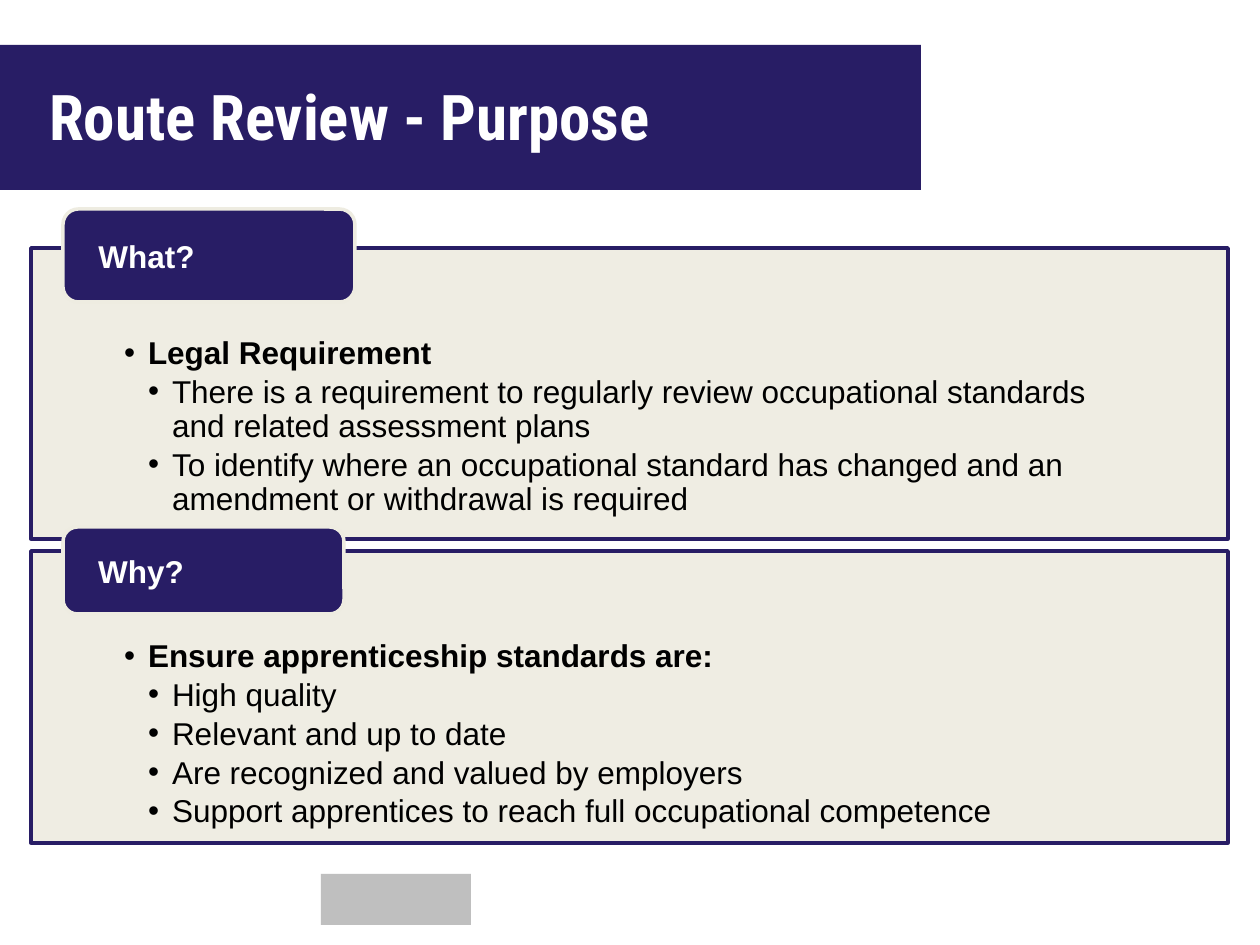
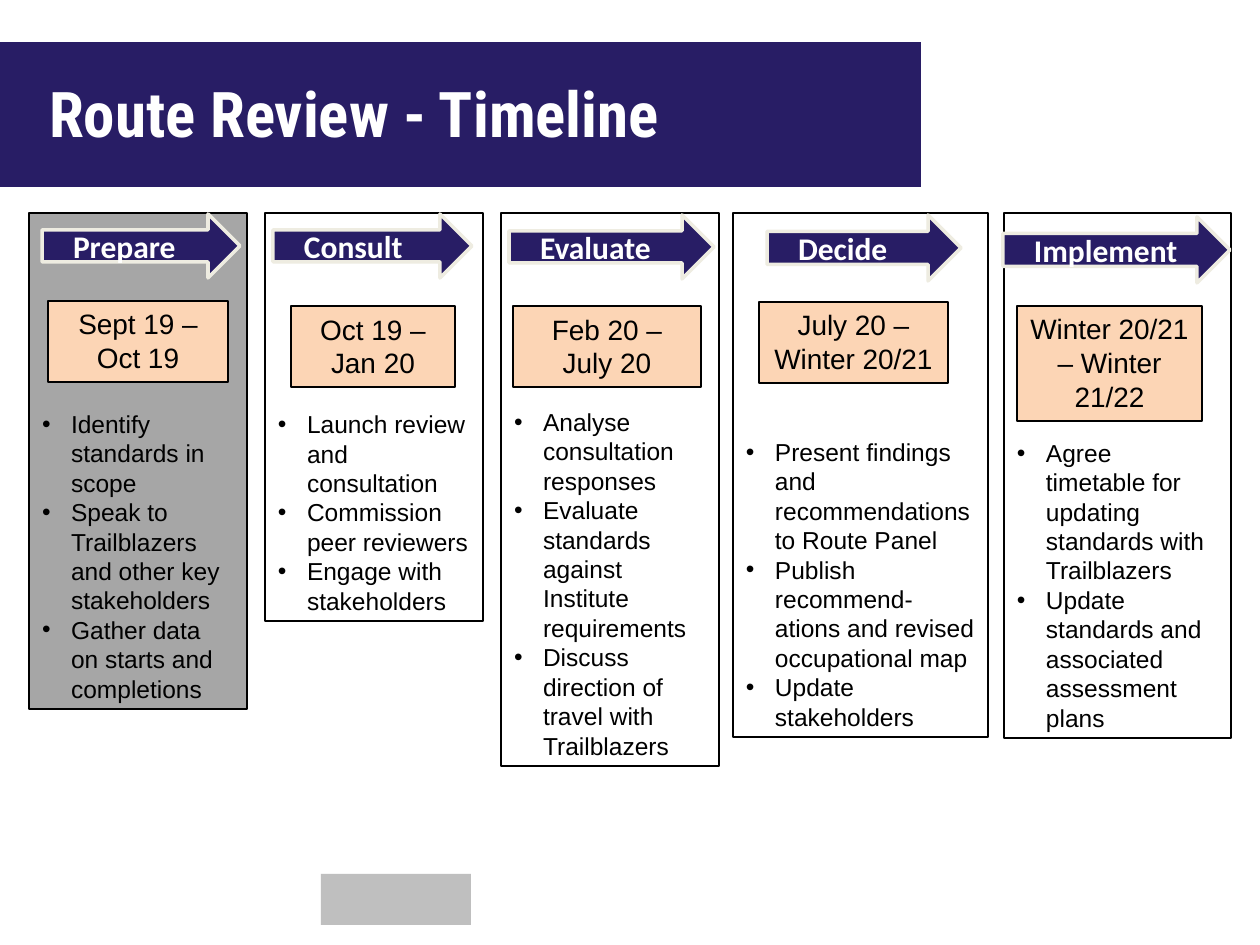
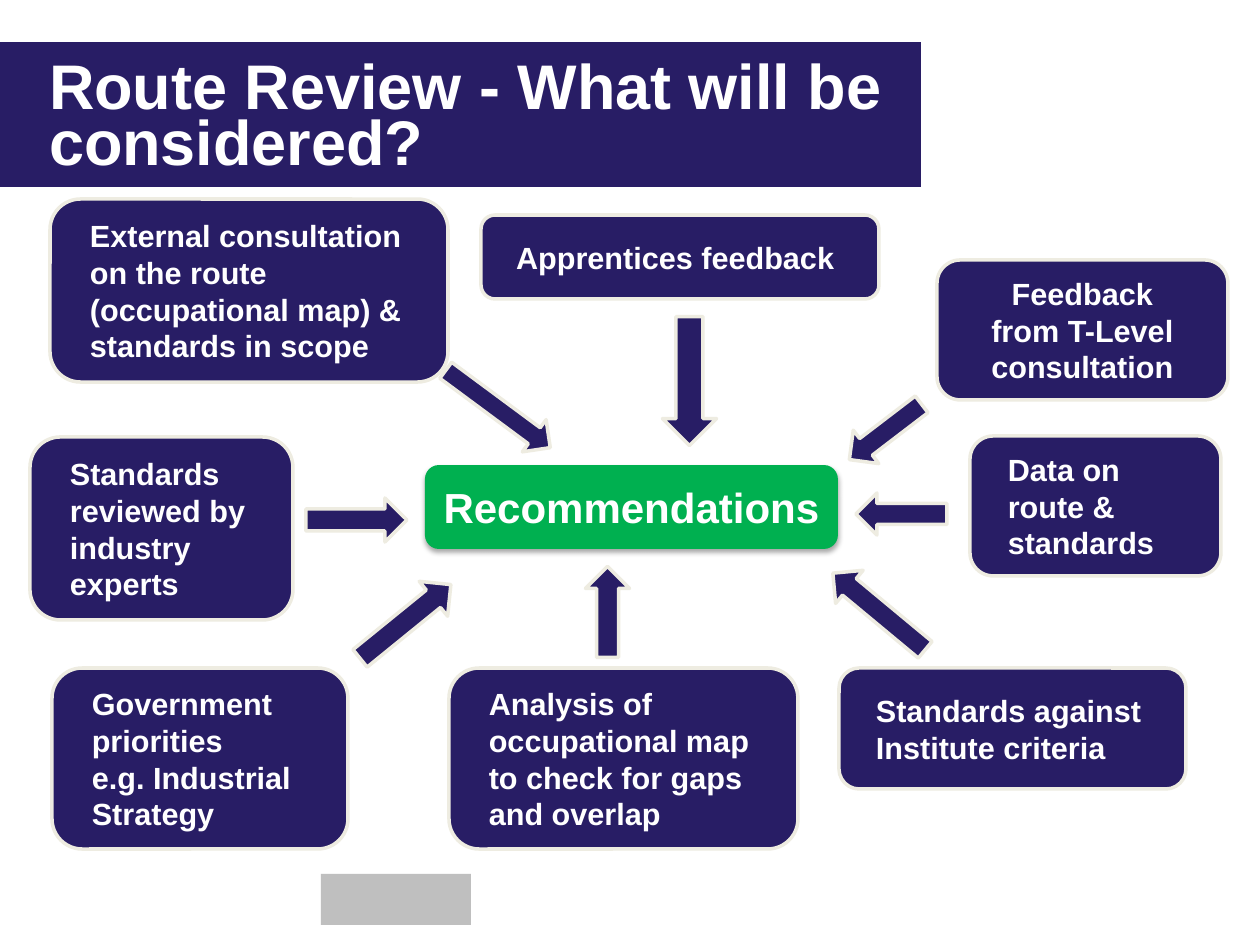
from lxml.etree import SubElement
from pptx import Presentation
from pptx.dml.color import RGBColor
from pptx.enum.shapes import MSO_SHAPE as Preset
from pptx.enum.text import MSO_ANCHOR as Anchor, MSO_AUTO_SIZE as AutoSize, PP_ALIGN as Align
from pptx.oxml.ns import qn
from pptx.util import Emu, Inches, Pt

NAVY = RGBColor(0x28, 0x1D, 0x65)
CREAM = RGBColor(0xEE, 0xEC, 0xE1)
WHITE = RGBColor(0xFF, 0xFF, 0xFF)
BLACK = RGBColor(0x00, 0x00, 0x00)
SILVER = RGBColor(0xBF, 0xBF, 0xBF)
GREY = RGBColor(0xA6, 0xA6, 0xA6)
PEACH = RGBColor(0xFC, 0xD5, 0xB5)
GREEN = RGBColor(0x00, 0xB0, 0x50)

SCALE = Inches(1) / 126
TWO_CONTENT, TITLE_ONLY = 3, 5
PLAIN_INSETS = (13, 6, 13, 6)
LABEL_INSETS = (31, 0, 31, 0)
PANEL_INSETS = (93, 89, 93, 18)

TITLE_FONT = {"name": "Roboto Condensed", "size": Pt(36), "bold": True}
TAB_FONT = {"name": "Arial", "size": Pt(18), "bold": True}
LIST_FONT = {"name": "Arial", "size": Pt(18), "bold": False}
STEP_FONT = {"name": "Calibri", "size": Pt(18), "bold": True}
DATE_FONT = {"name": "Arial", "size": Pt(16), "bold": False}
TASK_FONT = {"name": "Arial", "size": Pt(14), "bold": False}
SOURCE_FONT = {"name": "Arial", "size": Pt(17.5), "bold": True}
RESULT_FONT = {"name": "Arial", "size": Pt(24), "bold": True}

TITLE_PARA = {"alignment": Align.LEFT, "line_spacing": Pt(32), "space_before": Pt(0)}
LIST_PARA = {"line_spacing": 0.9, "space_before": Pt(0), "space_after": Pt(2.8)}
LEFT_PARA = {"alignment": Align.LEFT}
CENTRE_PARA = {"alignment": Align.CENTER}

PANELS = [
    ((31, 248, 1197, 291), (63, 209, 292, 93), "What?", "Legal Requirement", [
        "There is a requirement to regularly review occupational standards "
        "and related assessment plans",
        "To identify where an occupational standard has changed and an "
        "amendment or withdrawal is required"]),
    ((31, 551, 1197, 292), (63, 527, 281, 87), "Why?", "Ensure apprenticeship standards are:", [
        "High quality",
        "Relevant and up to date",
        "Are recognized and valued by employers",
        "Support apprentices to reach full occupational competence"]),
]

COLUMN_TOP = 213
STEPS = [
    ((29, 218, 496), GREY, "Prepare", (13, 1, 198, 64), ["Sept 19 – Oct 19"], (19, 88, 180, 81),
     ["Identify standards in scope", "Speak to Trailblazers and other key stakeholders",
      "Gather data on starts and completions"]),
    ((265, 218, 408), None, "Consult", (8, 1, 199, 64), ["Oct 19 –", "Jan 20"], (26, 93, 164, 81),
     ["Launch review and consultation", "Commission peer reviewers",
      "Engage with stakeholders"]),
    ((501, 218, 553), None, "Evaluate", (8, 2, 205, 64), ["Feb 20 – July 20"], (12, 93, 188, 81),
     ["Analyse consultation responses", "Evaluate standards against Institute requirements",
      "Discuss direction of travel with Trailblazers"]),
    ((733, 255, 524), None, "Decide", (34, 2, 194, 66), ["July 20 – Winter 20/21"], (26, 89, 189, 81),
     ["Present findings and recommendations to Route Panel",
      "Publish recommend-ations and revised occupational map", "Update stakeholders"]),
    ((1004, 227, 525), None, "Implement", (-1, 4, 227, 66), ["Winter 20/21 – Winter 21/22"],
     (13, 93, 185, 115),
     ["Agree timetable for updating standards with Trailblazers",
      "Update standards and associated assessment plans"]),
]

SOURCES = [
    ((50, 199, 398, 183), LEFT_PARA,
     ["External consultation on the route (occupational map) & standards in scope"]),
    ((481, 215, 398, 84), LEFT_PARA, ["Apprentices feedback"]),
    ((937, 260, 291, 140), CENTRE_PARA, ["Feedback from T-Level consultation"]),
    ((30, 437, 263, 183), LEFT_PARA, ["Standards reviewed by industry experts"]),
    ((970, 436, 251, 140), LEFT_PARA, ["Data on route & standards"]),
    ((52, 668, 296, 181), LEFT_PARA, ["Government priorities", "e.g. Industrial Strategy"]),
    ((449, 668, 349, 181), LEFT_PARA,
     ["Analysis of occupational map to check for gaps and overlap"]),
    ((839, 668, 347, 121), LEFT_PARA, ["Standards against Institute criteria"]),
]

POINTERS = [
    (Preset.RIGHT_ARROW, (433, 389, 130, 40), 36.5),
    (Preset.RIGHT_ARROW, (306, 498, 101, 44), 0),
    (Preset.RIGHT_ARROW, (347, 599, 117, 45), 320.9),
    (Preset.LEFT_ARROW, (840, 411, 91, 42), 322.6),
    (Preset.LEFT_ARROW, (625, 354, 129, 54), 270),
    (Preset.LEFT_ARROW, (819, 590, 120, 43), 39.7),
    (Preset.LEFT_ARROW, (562, 590, 91, 44), 90),
    (Preset.LEFT_ARROW, (856, 493, 91, 42), 0),
]


def px(length):
    return Emu(round(length * SCALE))


def apply(target, values):
    for name, value in values.items():
        setattr(target, name, value)


def place(shape, box):
    apply(shape, dict(zip(("left", "top", "width", "height"), map(px, box))))


def paint(shape, fill, line=None, width=2):
    if fill is None:
        shape.fill.background()
    else:
        shape.fill.solid()
        shape.fill.fore_color.rgb = fill
    if line is None:
        shape.line.fill.background()
    else:
        shape.line.color.rgb = line
        shape.line.width = Pt(width)


def add_block(page, preset, box, fill, line=None, width=2):
    block = page.shapes.add_shape(preset, *map(px, box))
    block.shadow.inherit = False
    paint(block, fill, line, width)
    return block


def set_frame(shape, insets, anchor):
    frame = shape.text_frame
    sides = ("margin_left", "margin_top", "margin_right", "margin_bottom")
    apply(frame, dict(zip(sides, map(px, insets))))
    apply(frame, {"word_wrap": True, "auto_size": AutoSize.NONE, "vertical_anchor": anchor})
    return frame


def add_bullet(para, margin, hanging):
    properties = para._p.get_or_add_pPr()
    properties.set("marL", str(px(margin)))
    properties.set("indent", str(-px(hanging)))
    SubElement(properties, qn("a:buFont")).set("typeface", "Arial")
    SubElement(properties, qn("a:buChar")).set("char", "•")


def write(frame, lines, font, color, para_format, hanging=0):
    for number, line in enumerate(lines):
        para = frame.add_paragraph() if number else frame.paragraphs[0]
        if hanging:
            add_bullet(para, hanging, hanging)
        apply(para, para_format)
        span = para.add_run()
        span.text = line
        apply(span.font, font)
        span.font.color.rgb = color


def add_page(deck, layout, title, top, font=TITLE_FONT):
    page = deck.slides.add_slide(deck.slide_layouts[layout])
    band = page.shapes.title
    place(band, (0, top, 921, 145))
    paint(band, NAVY)
    write(set_frame(band, (49, 15, 0, 0), Anchor.MIDDLE), [title], font, WHITE, TITLE_PARA)
    return page


def add_footer_to_master(deck, page):
    block = add_block(page, Preset.RECTANGLE, (321, 874, 150, 51), SILVER)
    block.element.nvSpPr.cNvPr.set("id", "99")
    deck.slide_master.shapes.element.insert(2, block.element)


def add_label(page, preset, box, lines, font, para_format=LEFT_PARA):
    label = add_block(page, preset, box, NAVY, CREAM)
    write(set_frame(label, LABEL_INSETS, Anchor.MIDDLE), lines, font, WHITE, para_format)


def fill_panel(panel, box, heading, points):
    place(panel, box)
    paint(panel, CREAM, NAVY)
    color = panel.element.spPr.find(qn("a:solidFill")).find(qn("a:srgbClr"))
    SubElement(color, qn("a:alpha")).set("val", "90000")
    frame = set_frame(panel, PANEL_INSETS, Anchor.TOP)
    write(frame, [heading, *points], LIST_FONT, BLACK, LIST_PARA, 24)
    frame.paragraphs[0].runs[0].font.bold = True
    for para in frame.paragraphs[1:]:
        para.level = 1
        para._p.get_or_add_pPr().set("marL", str(px(48)))


def add_step(page, column, fill, name, arrow, dates, date_box, tasks):
    left, width, height = column

    def within(box):
        return (left + box[0], COLUMN_TOP + box[1], *box[2:])

    body = add_block(page, Preset.RECTANGLE, (left, COLUMN_TOP, width, height), fill, BLACK, 0.75)
    write(set_frame(body, PLAIN_INSETS, Anchor.BOTTOM), tasks, TASK_FONT, BLACK, LEFT_PARA, 29)
    add_label(page, Preset.RIGHT_ARROW, within(arrow), [name], STEP_FONT)
    period = add_block(page, Preset.RECTANGLE, within(date_box), PEACH, BLACK, 0.75)
    write(set_frame(period, PLAIN_INSETS, Anchor.TOP), dates, DATE_FONT, BLACK, CENTRE_PARA)


def add_result(page, box):
    result = add_block(page, Preset.ROUNDED_RECTANGLE, box, GREEN)
    write(set_frame(result, PLAIN_INSETS, Anchor.MIDDLE), ["Recommendations"],
          RESULT_FONT, WHITE, CENTRE_PARA)
    effects = result.element.spPr.find(qn("a:effectLst"))
    shadow = SubElement(effects, qn("a:outerShdw"), blurRad="40000", dist="23000",
                        dir="5400000", rotWithShape="0")
    color = SubElement(shadow, qn("a:srgbClr"), val="000000")
    SubElement(color, qn("a:alpha"), val="35000")


def build_purpose(deck):
    page = add_page(deck, TWO_CONTENT, "Route Review - Purpose", 45)
    add_footer_to_master(deck, page)
    for number, (box, tab, name, heading, points) in enumerate(PANELS, 1):
        fill_panel(page.placeholders[number], box, heading, points)
        add_label(page, Preset.ROUNDED_RECTANGLE, tab, [name], TAB_FONT)


def build_timeline(deck):
    page = add_page(deck, TITLE_ONLY, "Route Review - Timeline", 42)
    for step in STEPS:
        add_step(page, *step)


def build_considerations(deck):
    page = add_page(deck, TITLE_ONLY, "Route Review - What will be considered?", 42,
                    {**TITLE_FONT, "name": "Arial"})
    for box, para_format, lines in SOURCES:
        add_label(page, Preset.ROUNDED_RECTANGLE, box, lines, SOURCE_FONT, para_format)
    add_result(page, (425, 465, 413, 84))
    for preset, box, angle in POINTERS:
        add_block(page, preset, box, NAVY, CREAM).rotation = angle


def main():
    deck = Presentation()
    apply(deck, {"slide_width": px(1260), "slide_height": px(945)})
    build_purpose(deck)
    build_timeline(deck)
    build_considerations(deck)
    deck.save("out.pptx")


if __name__ == "__main__":
    main()
